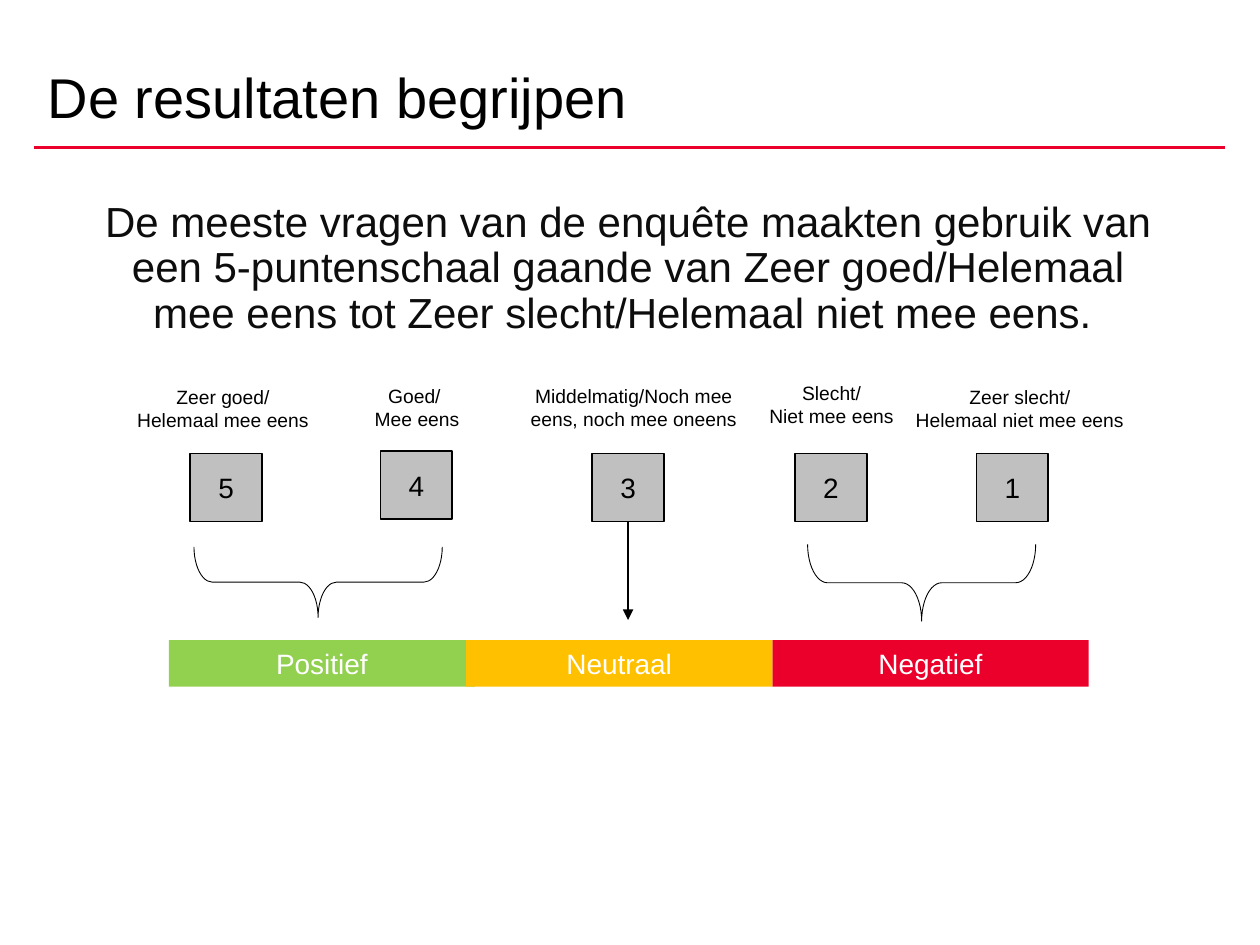
import pptx
import pptx.dml.color
import pptx.enum.dml
import pptx.enum.shapes
import pptx.enum.text
import pptx.oxml
import pptx.oxml.ns
import pptx.util

COLORS = {
    "ink": "000000", "body": "0D0D0D", "score": "C0C0C0", "white": "FFFFFF",
    "positive": "92D050", "neutral": "FFC000", "negative": "EA002A",
}
RGB = {name: pptx.dml.color.RGBColor.from_string(code) for name, code in COLORS.items()}
SHAPE = pptx.enum.shapes.MSO_SHAPE
ANCHOR = pptx.enum.text.MSO_ANCHOR
ALIGN = pptx.enum.text.PP_ALIGN

deck = pptx.Presentation()
deck.slide_width = pptx.util.Inches(10)
deck.slide_height = pptx.util.Inches(7.5)
slide = deck.slides.add_slide(deck.slide_layouts[5])
CELL = deck.slide_width / 100


def grid(*cells):
    """Turn cells of a grid 100 columns wide and 75 rows high into lengths."""
    return [pptx.util.Emu(round(cell * CELL)) for cell in cells]


def write(shape, text, size, color, align=ALIGN.CENTER, spacing=None, **frame_format):
    """Fill a shape with text; \\n starts a paragraph, \\v breaks a line."""
    frame = shape.text_frame
    frame.text = text
    frame_format = {"word_wrap": True, "auto_size": pptx.enum.text.MSO_AUTO_SIZE.NONE,
                    "vertical_anchor": ANCHOR.TOP} | frame_format
    for name, value in frame_format.items():
        setattr(frame, name, value)
    for paragraph in frame.paragraphs:
        paragraph.alignment = align
        paragraph.line_spacing = spacing
        for run in paragraph.runs:
            for name, value in {"name": "Arial", "size": pptx.util.Pt(size)}.items():
                setattr(run.font, name, value)
            run.font.color.rgb = RGB[color]


# Title and its rule
title = slide.shapes.title
title.left, title.top, title.width, title.height = grid(2.8, 0.5, 90, 10.3)
write(title, "De resultaten begrijpen", 32, "ink", ALIGN.LEFT, 0.8,
      vertical_anchor=ANCHOR.BOTTOM)
title_rule = slide.shapes.add_connector(
    pptx.enum.shapes.MSO_CONNECTOR.STRAIGHT, *grid(2.7, 11.7, 97.2, 11.7))

# Explanation of the scale
explanation = slide.shapes.add_textbox(*grid(5.8, 15.3, 88.1, 12.8))
write(explanation,
      "De meeste vragen van de enquête maakten gebruik van een 5-puntenschaal gaande van "
      "Zeer goed/Helemaal mee eens tot Zeer slecht/Helemaal niet mee eens. ",
      24, "body", spacing=pptx.util.Pt(26),
      **dict.fromkeys(("margin_left", "margin_right"), grid(1.1)[0]),
      **dict.fromkeys(("margin_top", "margin_bottom"), grid(0.6)[0]))

# Scores: number, box left and top, label, label left, top and width
scores = [
    ("5", 15.1, 36, "Zeer goed/\nHelemaal mee eens", 9.6, 30.1, 16.2),
    ("4", 30.2, 35.8, "Goed/ \nMee eens", 27.7, 30, 10.8),
    ("3", 47, 36, "Middelmatig/Noch mee eens, noch mee oneens", 40.4, 30, 19.8),
    ("2", 63.1, 36, "Slecht/\vNiet mee eens", 59.8, 29.8, 12.4),
    ("1", 77.5, 36, "Zeer slecht/\vHelemaal niet mee eens", 71.6, 30.1, 18.7),
]
score_boxes = {}
for number, box_left, box_top, label, label_left, label_top, label_width in scores:
    score = slide.shapes.add_shape(SHAPE.RECTANGLE, *grid(box_left, box_top, 5.7, 5.4))
    score.shadow.inherit = False
    score.fill.solid()
    score.fill.fore_color.rgb = RGB["score"]
    score.line.color.rgb = RGB["ink"]
    score.line.width = pptx.util.Pt(1)
    write(score, number, 16, "ink", word_wrap=False, vertical_anchor=ANCHOR.MIDDLE)
    score_boxes[number] = score
    meaning = slide.shapes.add_textbox(*grid(label_left, label_top, label_width, 4.7))
    write(meaning, label, 11, "ink")

# Verdict bands
for verdict, color, left, width in [
    ("Positief", "positive", 13.4, 24.3),
    ("Negatief", "negative", 61.3, 25.1),
    ("Neutraal", "neutral", 37, 24.3),
]:
    band = slide.shapes.add_shape(SHAPE.RECTANGLE, *grid(left, 50.8, width, 3.7))
    band.shadow.inherit = False
    band.fill.solid()
    band.fill.fore_color.rgb = RGB[color]
    band.line.fill.background()
    write(band, verdict, 16, "white", vertical_anchor=ANCHOR.MIDDLE)

# Braces, turned to point down from a pair of scores to their verdict
for center_x, center_y, depth, span in [(25.25, 46.2, 5.6, 19.7), (73.15, 46.25, 6.1, 18.1)]:
    brace = slide.shapes.add_shape(
        SHAPE.LEFT_BRACE, *grid(center_x - depth / 2, center_y - span / 2, depth, span))
    brace.shadow.inherit = False
    brace.rotation = 270
    brace.adjustments[0] = 0.26
    brace.fill.background()
    brace.line.color.rgb = RGB["ink"]
    brace.line.width = pptx.util.Pt(0.5)

# Arrow from the middle score to the neutral verdict
neutral_arrow = slide.shapes.add_connector(
    pptx.enum.shapes.MSO_CONNECTOR.STRAIGHT, *grid(49.85, 41.4, 49.85, 49.2))
neutral_arrow.begin_connect(score_boxes["3"], 2)

for connector, color, width in [(title_rule, "negative", 2), (neutral_arrow, "ink", 1)]:
    connector.line.color.rgb = RGB[color]
    connector.line.width = pptx.util.Pt(width)
    connector._element.spPr.append(pptx.oxml.parse_xml(
        f'<a:effectLst {pptx.oxml.ns.nsdecls("a")}/>'))
neutral_arrow.line._get_or_add_ln().append(pptx.oxml.parse_xml(
    f'<a:tailEnd {pptx.oxml.ns.nsdecls("a")} type="triangle"/>'))

deck.save("out.pptx")
